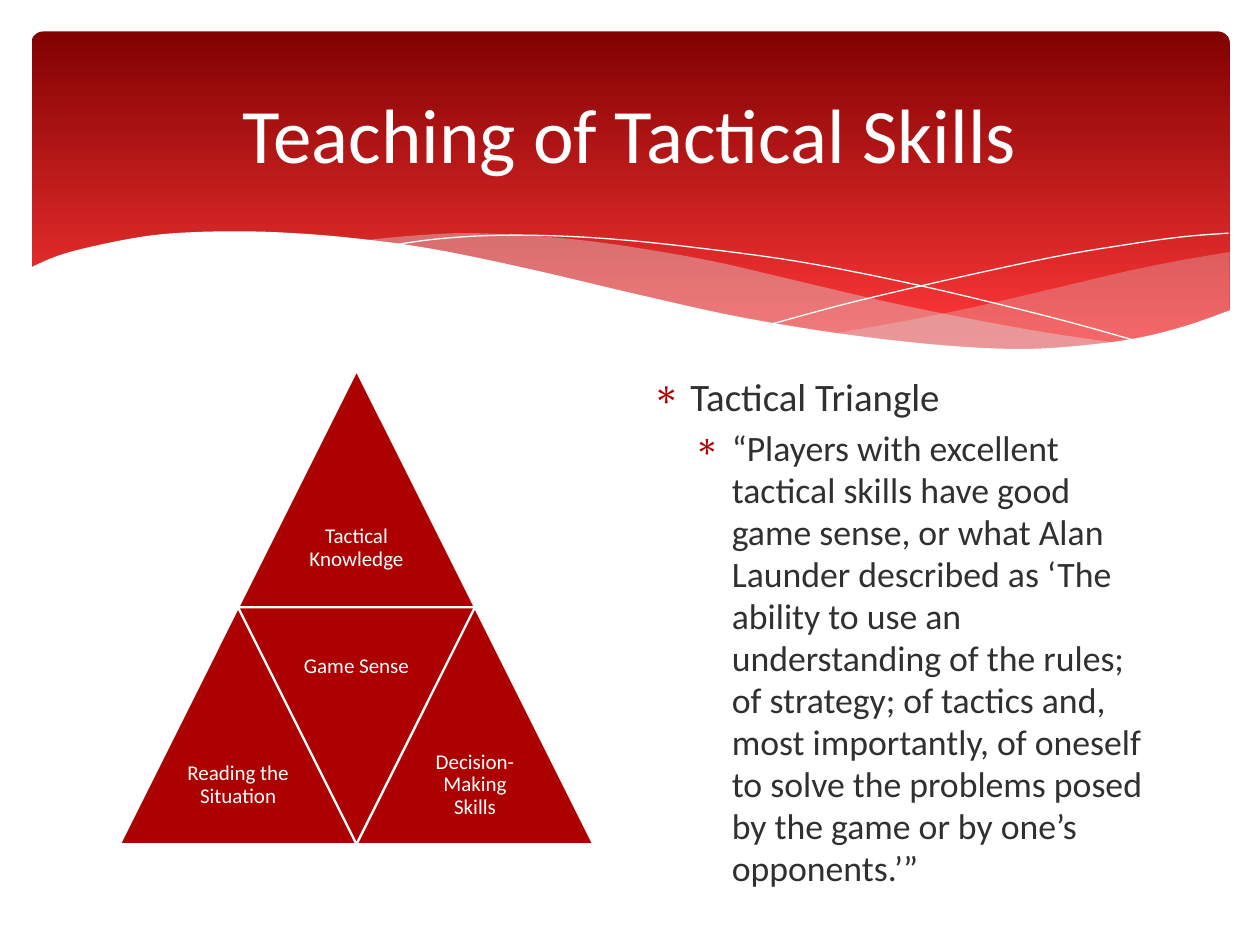
from lxml.etree import SubElement
from pptx import Presentation
from pptx.dml.color import RGBColor
from pptx.enum.shapes import MSO_SHAPE
from pptx.enum.text import MSO_ANCHOR, PP_ALIGN
from pptx.oxml.ns import qn
from pptx.util import Inches, Pt

COLORS = {"dark": "820101", "bright": "FE3737", "red": "AD0101",
          "mist": "DEDEE0", "white": "FFFFFF", "text": "303030"}
FONT = "Calibri"

# Wave outlines as key points, in inches from the corner of the header
RIGHT_TOP = [(9.76, 2), (9.35, 2.07), (8.91, 2.16), (8.32, 2.3), (7.53, 2.48), (6.61, 2.65)]
RIGHT_BOTTOM = [(6.61, 2.65), (7.05, 2.71), (7.57, 2.76), (8.03, 2.78), (8.54, 2.76),
                (8.97, 2.7), (9.35, 2.62), (9.76, 2.47)]
MIDDLE_TOP = [(8.93, 2.73), (8.37, 2.65), (7.75, 2.54), (7.06, 2.4), (6.29, 2.22), (5.69, 2.08),
              (5.14, 1.98), (4.65, 1.91), (4.2, 1.87), (3.7, 1.85), (3.28, 1.87), (2.86, 1.91)]
MIDDLE_BOTTOM = [(2.86, 1.91), (3.42, 1.99), (4.04, 2.11), (4.91, 2.32), (5.66, 2.48),
                 (6.34, 2.61), (6.95, 2.7), (7.48, 2.76), (7.96, 2.78), (8.48, 2.77), (8.93, 2.73)]
FALLING_LINE = [(3.09, 1.95), (3.44, 1.9), (3.87, 1.87), (4.33, 1.87), (4.89, 1.9), (5.56, 1.97),
                (6.36, 2.08), (7.27, 2.26), (8.31, 2.51), (9.07, 2.72)]
RISING_LINE = [(6.13, 2.57), (6.72, 2.41), (7.48, 2.23), (8.36, 2.04), (8.95, 1.94),
               (9.38, 1.88), (9.75, 1.85)]
WHITE_WAVE = [(9.77, 2.46), (9.4, 2.59), (8.99, 2.69), (8.5, 2.75), (8.09, 2.77), (7.61, 2.75),
              (7.08, 2.7), (6.48, 2.62), (5.79, 2.5), (5.03, 2.33), (4.18, 2.13), (3.4, 1.97),
              (2.71, 1.88), (2.11, 1.84), (1.61, 1.84), (1.19, 1.87), (0.76, 1.95),
              (0.46, 2.03), (0.23, 2.13)]


def rgb(name):
    return RGBColor.from_string(COLORS[name])


def smooth(points, steps=5):
    """Return points along a Catmull-Rom curve through the key points."""
    padded = [points[0], *points, points[-1]]
    curve = [points[0]]
    for a, b, c, d in zip(padded, padded[1:], padded[2:], padded[3:]):
        for i in range(1, steps + 1):
            t = i / steps
            curve.append(tuple(
                (2 * q + (r - p) * t + (2 * p - 5 * q + 4 * r - s) * t ** 2
                 + (3 * q - p - 3 * r + s) * t ** 3) / 2
                for p, q, r, s in zip(a, b, c, d)))
    return curve


def add_wave(s, x, y, points, fill=None, alpha=None):
    """Draw a filled outline, or an open white hairline when there is no fill."""
    pts = [(Inches(x + px), Inches(y + py)) for px, py in points]
    builder = s.shapes.build_freeform(*pts[0])
    builder.add_line_segments(pts[1:], close=fill is not None)
    sp = builder.convert_to_shape()
    sp.shadow.inherit = False
    if fill is None:
        sp.fill.background()
        sp.line.color.rgb = rgb("white")
        sp.line.width = Pt(0)
        return
    sp.fill.solid()
    sp.fill.fore_color.rgb = rgb(fill)
    sp.line.fill.background()
    if alpha:
        color = sp.fill._xPr.find(qn("a:solidFill"))[0]
        SubElement(color, qn("a:alpha"), val=str(alpha * 1000))


def add_text(s, x, y, w, h, anchor=MSO_ANCHOR.TOP, inset=None):
    tf = s.shapes.add_textbox(Inches(x), Inches(y), Inches(w), Inches(h)).text_frame
    tf.word_wrap = True
    tf.vertical_anchor = anchor
    if inset is not None:
        tf.margin_left = tf.margin_right = tf.margin_top = tf.margin_bottom = Inches(inset)
    return tf


def style(p, text, size, color, align=PP_ALIGN.LEFT):
    p.text = text
    p.alignment = align
    p.font.size = Pt(size)
    p.font.name = FONT
    p.font.color.rgb = rgb(color)


def add_header(s, x, y, title):
    panel = s.shapes.add_shape(MSO_SHAPE.ROUNDED_RECTANGLE, Inches(x + 0.25), Inches(y + 0.25),
                               Inches(9.51), Inches(2.7))
    panel.adjustments[0] = 0.034
    panel.shadow.inherit = False
    panel.line.fill.background()
    panel.fill.gradient()
    panel.fill.gradient_angle = 270
    for stop, color, position in zip(panel.fill.gradient_stops, ("dark", "bright"), (0, 0.9)):
        stop.color.rgb = rgb(color)
        stop.position = position

    add_wave(s, x, y, smooth(RIGHT_TOP) + smooth(RIGHT_BOTTOM), "mist", 29)
    add_wave(s, x, y, smooth(MIDDLE_TOP) + smooth(MIDDLE_BOTTOM), "mist", 40)
    add_wave(s, x, y, smooth(FALLING_LINE))
    add_wave(s, x, y, smooth(RISING_LINE))
    add_wave(s, x, y, smooth(WHITE_WAVE) + [(0.23, 3.29), (9.77, 3.29)], "white")

    tf = add_text(s, x + 0.5, y + 0.37, 9, 1.37, MSO_ANCHOR.MIDDLE)
    style(tf.paragraphs[0], title, 44, "white", PP_ALIGN.CENTER)


def add_tactical_triangle(s, x, y, size, top, left, center, right):
    """Split a triangle of the given width and height into four labelled ones."""
    side, quarter = size / 2, size / 4
    parts = [(top, quarter, 0, False), (left, 0, side, False),
             (center, quarter, side, True), (right, side, side, False)]
    for label, dx, dy, flipped in parts:
        sp = s.shapes.add_shape(MSO_SHAPE.ISOSCELES_TRIANGLE, Inches(x + dx), Inches(y + dy),
                                Inches(side), Inches(side))
        sp.rotation = 180 if flipped else 0
        sp.shadow.inherit = False
        sp.fill.solid()
        sp.fill.fore_color.rgb = rgb("red")
        sp.line.color.rgb = rgb("white")
        sp.line.width = Pt(1.25)
        label_y = y + dy + (0 if flipped else quarter)
        tf = add_text(s, x + dx + side / 4, label_y, quarter, quarter, MSO_ANCHOR.MIDDLE, 0.05)
        p = tf.paragraphs[0]
        style(p, label, 12, "white", PP_ALIGN.CENTER)
        p.line_spacing = 0.9


def add_bullets(s, x, y, w, h, items):
    tf = add_text(s, x, y, w, h)
    for i, (level, size, text) in enumerate(items):
        p = tf.paragraphs[0] if i == 0 else tf.add_paragraph()
        style(p, text, size, "text")
        p.level = level
        p.space_before = Pt(size * 0.2)
        p.line_spacing = 0.98
        pPr = p._p.get_or_add_pPr()
        pPr.set("marL", str(Inches(0.3 + 0.33 * level)))
        pPr.set("indent", str(Inches(-0.3)))
        bullet_color = pPr.makeelement(qn("a:buClr"), {})
        SubElement(bullet_color, qn("a:srgbClr"), val=COLORS["red"])
        bullet = pPr.makeelement(qn("a:buChar"), {"char": "∗"})
        defaults = pPr.find(qn("a:defRPr"))
        defaults.addprevious(bullet_color)
        defaults.addprevious(bullet)


def main():
    prs = Presentation()
    prs.slide_width, prs.slide_height = Inches(10), Inches(7.5)
    s = prs.slides.add_slide(prs.slide_layouts[6])
    add_header(s, 0, 0, "Teaching of Tactical Skills")
    add_tactical_triangle(s, 0.95, 2.94, 3.76, "Tactical Knowledge", "Reading the Situation",
                          "Game Sense", "Decision- Making Skills")
    add_bullets(s, 5.08, 2.93, 4.18, 3.77, [
        (0, 22.2, "Tactical Triangle"),
        (1, 20.4, "“Players with excellent tactical skills have good game sense, or what Alan "
                  "Launder described as ‘The ability to use an understanding of the rules; of "
                  "strategy; of tactics and, most importantly, of oneself to solve the problems "
                  "posed by the game or by one’s opponents.’”"),
    ])
    prs.save("out.pptx")


if __name__ == "__main__":
    main()
